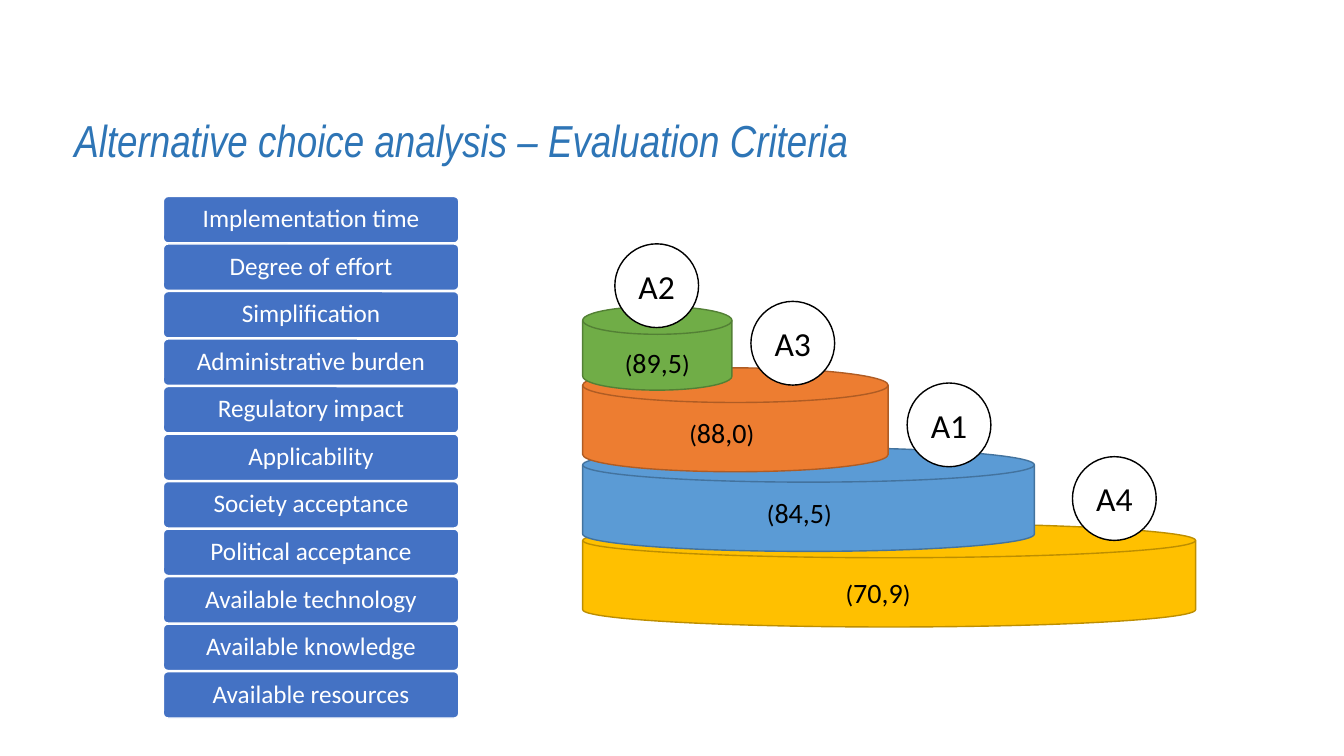
import pptx
import pptx.dml.color
import pptx.enum.shapes
import pptx.enum.text
import pptx.util

Pt = pptx.util.Pt
RGBColor = pptx.dml.color.RGBColor
SHAPES = pptx.enum.shapes.MSO_SHAPE
ALIGN = pptx.enum.text.PP_ALIGN
ANCHOR = pptx.enum.text.MSO_ANCHOR

WHITE = RGBColor(0xFF, 0xFF, 0xFF)
BLACK = RGBColor(0x00, 0x00, 0x00)
TITLE_BLUE = RGBColor(0x2E, 0x75, 0xB6)
CRITERION_BLUE = RGBColor(0x44, 0x72, 0xC4)
GOLD = RGBColor(0xFF, 0xC0, 0x00)
GOLD_EDGE = RGBColor(0xBD, 0x8E, 0x00)
BLUE = RGBColor(0x5B, 0x9B, 0xD5)
BLUE_EDGE = RGBColor(0x43, 0x73, 0x9E)
ORANGE = RGBColor(0xED, 0x7D, 0x31)
ORANGE_EDGE = RGBColor(0xAF, 0x5C, 0x24)
GREEN = RGBColor(0x70, 0xAD, 0x47)
GREEN_EDGE = RGBColor(0x53, 0x80, 0x35)

CRITERIA = [
    "Implementation time", "Degree of effort", "Simplification",
    "Administrative burden", "Regulatory impact", "Applicability",
    "Society acceptance", "Political acceptance", "Available technology",
    "Available knowledge", "Available resources",
]
CRITERIA_TOP = 140.4
CRITERIA_PITCH = 33.94

DISK_LEFT = 416.2
# Bottom to top: disk top, width, height, fill, edge
DISKS = [
    (373.7, 437.8, 74.2, GOLD, GOLD_EDGE),
    (319.7, 322.6, 74.2, BLUE, BLUE_EDGE),
    (262.8, 218.2, 74.2, ORANGE, ORANGE_EDGE),
    (218.9, 106.6, 59.8, GREEN, GREEN_EDGE),
]
# Name, badge left and top, score, score left and top
ALTERNATIVES = [
    ("A2", 439.2, 174.2, "89,5", 439.2, 243.4),
    ("A3", 536.4, 215.3, "88,0", 485.3, 293),
    ("A1", 648, 273.6, "84,5", 540.7, 350.6),
    ("A4", 766.1, 326.2, "70,9", 596.9, 407.5),
]
BADGE_SIZE = 59.8


def write_text(box, text, size, color=BLACK, font="Calibri", italic=False,
               align=ALIGN.LEFT, anchor=ANCHOR.TOP, line_spacing=1.0):
    """Append a formatted span to the first paragraph of a box."""
    box.text_frame.word_wrap = True
    box.text_frame.vertical_anchor = anchor
    para = box.text_frame.paragraphs[0]
    para.alignment = align
    para.line_spacing = line_spacing
    span = para.add_run()
    span.text = text
    span.font.size = Pt(size)
    span.font.name = font
    span.font.italic = italic
    span.font.color.rgb = color


def add_box(page, left, top, width, height):
    return page.shapes.add_textbox(Pt(left), Pt(top), Pt(width), Pt(height))


def add_shape(page, kind, left, top, width, height, fill, edge):
    shape = page.shapes.add_shape(kind, Pt(left), Pt(top), Pt(width), Pt(height))
    shape.shadow.inherit = False
    shape.fill.solid()
    shape.fill.fore_color.rgb = fill
    shape.line.color.rgb = edge
    shape.line.width = Pt(1)
    return shape


def add_criterion(page, index, name):
    bar = add_shape(page, SHAPES.ROUNDED_RECTANGLE, 116.7,
                    CRITERIA_TOP + index * CRITERIA_PITCH, 211, 33.1,
                    CRITERION_BLUE, WHITE)
    bar.adjustments[0] = 0.1
    frame = bar.text_frame
    frame.margin_left = frame.margin_right = Pt(5)
    frame.margin_top = frame.margin_bottom = Pt(5)
    write_text(bar, name, 18, color=WHITE, align=ALIGN.CENTER,
               anchor=ANCHOR.MIDDLE, line_spacing=0.9)


def add_badge(page, name, left, top):
    badge = add_shape(page, SHAPES.OVAL, left, top, BADGE_SIZE, BADGE_SIZE,
                      WHITE, BLACK)
    write_text(badge, name, 24, align=ALIGN.CENTER, anchor=ANCHOR.MIDDLE)


def add_score(page, score, left, top):
    box = add_box(page, left, top, 74.2, 31.7)
    for text, size in (("(", 18), (score, 20), (")", 18)):
        write_text(box, text, size)


def main():
    deck = pptx.Presentation()
    deck.slide_width = Pt(960)
    deck.slide_height = Pt(540)
    page = deck.slides.add_slide(deck.slide_layouts[6])

    title = add_box(page, 46.1, 77, 866.9, 46.1)
    write_text(title, "Alternative choice analysis – Evaluation Criteria", 32,
               color=TITLE_BLUE, font="Arial Narrow", italic=True)

    for top, width, height, fill, edge in DISKS:
        add_shape(page, SHAPES.FLOWCHART_MAGNETIC_DISK, DISK_LEFT, top,
                  width, height, fill, edge)
    for name, badge_left, badge_top, score, score_left, score_top in ALTERNATIVES:
        add_badge(page, name, badge_left, badge_top)
        add_score(page, score, score_left, score_top)

    for index, name in enumerate(CRITERIA):
        add_criterion(page, index, name)

    deck.save("out.pptx")


if __name__ == "__main__":
    main()
